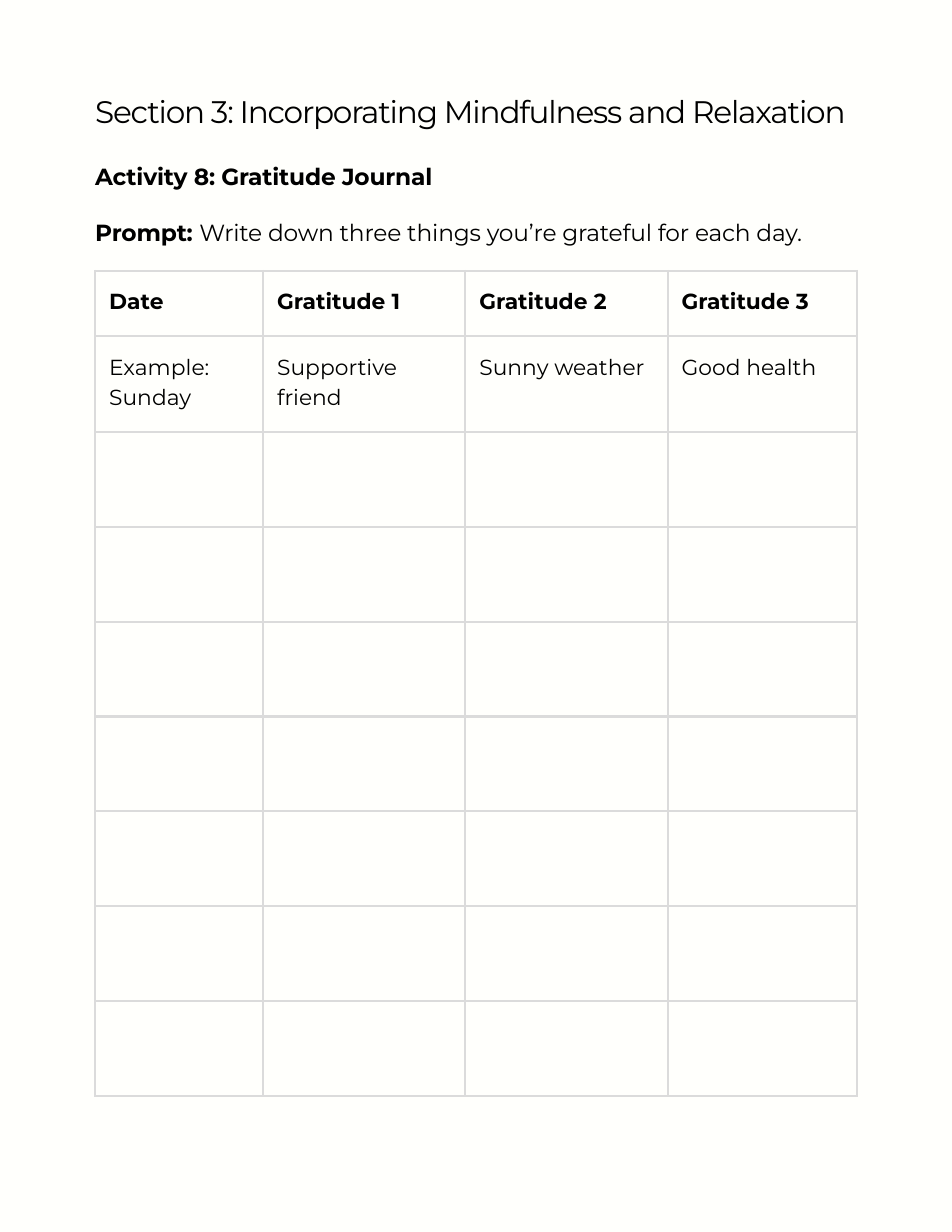
from dataclasses import dataclass

from lxml.etree import SubElement
from pptx import Presentation
from pptx.dml.color import RGBColor
from pptx.enum.text import MSO_ANCHOR, MSO_AUTO_SIZE, PP_ALIGN
from pptx.oxml.ns import qn
from pptx.util import Pt


@dataclass(frozen=True)
class Theme:
    font: str = "Montserrat"
    paper: RGBColor = RGBColor(0xFF, 0xFF, 0xFC)
    ink: RGBColor = RGBColor(0, 0, 0)
    rule: str = "DBDBDB"
    rule_width: float = 1.5
    title_size: float = 20
    body_size: float = 15
    cell_size: float = 14
    body_leading: float = 18
    cell_leading: float = 19.6
    cell_margin: float = 9


THEME = Theme()

FRAME_FORMAT = {
    "margin_left": 0, "margin_top": 0, "margin_right": 0, "margin_bottom": 0,
    "word_wrap": True, "vertical_anchor": MSO_ANCHOR.TOP,
    "auto_size": MSO_AUTO_SIZE.SHAPE_TO_FIT_TEXT,
}
CELL_FORMAT = {
    f"margin_{side}": Pt(THEME.cell_margin) for side in ("left", "top", "right", "bottom")
}

# Boxes are left, top, width, height in points
TITLE_BOX = (61.2, 65.5, 489.6, 19.4)
INTRO_BOX = (61.2, 104.4, 489.6, 50.4)
JOURNAL_BOX = (61.2, 174.2, 489.6, 530.5)

TITLE = "Section 3: Incorporating Mindfulness and Relaxation"
INTRO = [
    [("Activity 8: Gratitude Journal", True)],
    [("Prompt: ", True), ("Write down three things you’re grateful for each day.", False)],
]
JOURNAL_ROWS = [
    ["Date", "Gratitude 1", "Gratitude 2", "Gratitude 3"],
    ["Example: Sunday", "Supportive friend", "Sunny weather", "Good health"],
]
BLANK_ROWS = 7
COLUMN_WIDTHS = [108, 130, 130, 121.6]
ROW_HEIGHTS = [41.9, 61.6] + [61] * BLANK_ROWS


def apply_format(target, values):
    for name, value in values.items():
        setattr(target, name, value)


def write_paragraph(paragraph, parts, size, leading, spacing=0, space_before=0):
    """Fill a paragraph with (text, bold) parts; spacing is the tracking in points."""
    apply_format(paragraph, {
        "alignment": PP_ALIGN.LEFT,
        "line_spacing": Pt(leading),
        "space_before": Pt(space_before),
    })
    for text, bold in parts:
        run = paragraph.add_run()
        run.text = text
        apply_format(run.font, {"name": THEME.font, "size": Pt(size), "bold": bold})
        run.font.color.rgb = THEME.ink
        if spacing:
            run._r.get_or_add_rPr().set("spc", str(round(spacing * 100)))


def add_title(slide, box):
    title = slide.shapes.title
    apply_format(title, dict(zip(("left", "top", "width", "height"), map(Pt, box))))
    apply_format(title.text_frame, FRAME_FORMAT)
    write_paragraph(title.text_frame.paragraphs[0], [(TITLE, False)],
                    THEME.title_size, THEME.body_leading, spacing=-0.8)


def add_intro(slide, box):
    frame = slide.shapes.add_textbox(*map(Pt, box)).text_frame
    apply_format(frame, FRAME_FORMAT)
    for index, parts in enumerate(INTRO):
        paragraph = frame.add_paragraph() if index else frame.paragraphs[0]
        write_paragraph(paragraph, parts, THEME.body_size, THEME.body_leading,
                        spacing=-0.1, space_before=THEME.body_leading if index else 0)


def add_borders(cell):
    properties = cell._tc.get_or_add_tcPr()
    for side in ("lnL", "lnR", "lnT", "lnB"):
        line = SubElement(properties, qn(f"a:{side}"), w=str(Pt(THEME.rule_width)))
        fill = SubElement(line, qn("a:solidFill"))
        SubElement(fill, qn("a:srgbClr"), val=THEME.rule)


def add_journal(slide, box):
    table = slide.shapes.add_table(
        len(ROW_HEIGHTS), len(COLUMN_WIDTHS), *map(Pt, box)).table
    apply_format(table, {"first_row": False, "horz_banding": False})
    for column, width in zip(table.columns, COLUMN_WIDTHS):
        column.width = Pt(width)
    for row, height in zip(table.rows, ROW_HEIGHTS):
        row.height = Pt(height)

    # Every cell is ruled and see-through
    for cell in table.iter_cells():
        apply_format(cell, CELL_FORMAT)
        add_borders(cell)
        cell.fill.background()

    # Bold headings, then the example entry
    for row_index, texts in enumerate(JOURNAL_ROWS):
        for column_index, text in enumerate(texts):
            paragraph = table.cell(row_index, column_index).text_frame.paragraphs[0]
            write_paragraph(paragraph, [(text, row_index == 0)],
                            THEME.cell_size, THEME.cell_leading)


def main():
    presentation = Presentation()
    apply_format(presentation, {"slide_width": Pt(612), "slide_height": Pt(792)})
    slide = presentation.slides.add_slide(presentation.slide_layouts.get_by_name("Title Only"))
    slide.background.fill.solid()
    slide.background.fill.fore_color.rgb = THEME.paper

    add_title(slide, TITLE_BOX)
    add_intro(slide, INTRO_BOX)
    add_journal(slide, JOURNAL_BOX)
    presentation.save("out.pptx")


if __name__ == "__main__":
    main()
